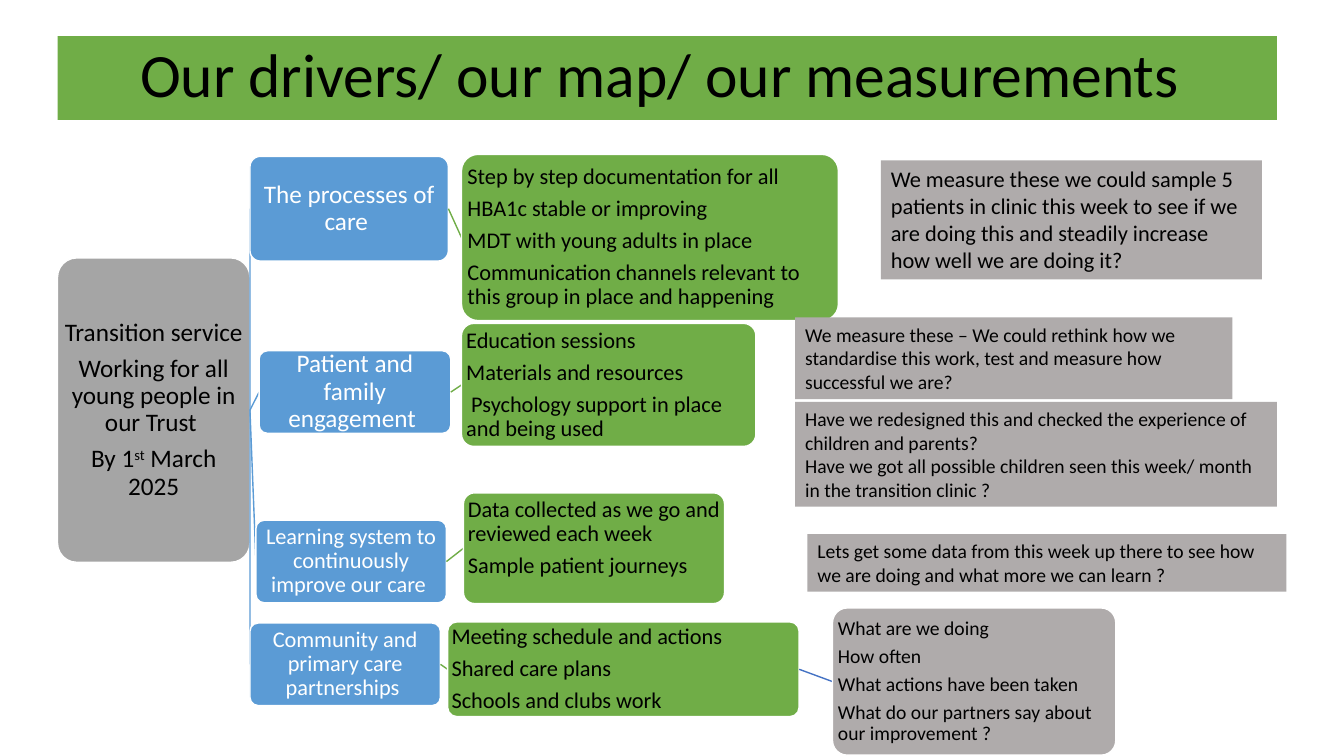
from lxml import etree
from pptx import Presentation
from pptx.dml.color import RGBColor
from pptx.enum.shapes import MSO_CONNECTOR, MSO_SHAPE
from pptx.enum.text import MSO_ANCHOR, MSO_AUTO_SIZE, PP_ALIGN
from pptx.oxml.ns import qn
from pptx.util import Cm, Pt

RECTANGLE, ROUNDED = MSO_SHAPE.RECTANGLE, MSO_SHAPE.ROUNDED_RECTANGLE
STRAIGHT = MSO_CONNECTOR.STRAIGHT
LEFT, CENTER = PP_ALIGN.LEFT, PP_ALIGN.CENTER
TOP, MIDDLE = MSO_ANCHOR.TOP, MSO_ANCHOR.MIDDLE
NO_FIT = MSO_AUTO_SIZE.NONE
LEFT_SIDE, RIGHT_SIDE = 1, 3

GREEN, BLUE, GREY, WARM_GREY = "70AD47", "5B9BD5", "A5A5A5", "AFABAB"
LINK_BLUE, BLACK, WHITE = "4472C4", "000000", "FFFFFF"


def paint(color_format, value):
    """Set a fill or font colour from a hex string."""
    color_format.rgb = RGBColor.from_string(value)


def write(frame, paragraphs, size=16, color=BLACK, align=LEFT, anchor=MIDDLE,
          spacing=0.9, after=0.35):
    """Fill a text frame; a paragraph with ^ marks has superscript between them."""
    frame.word_wrap = True
    frame.auto_size = NO_FIT
    frame.vertical_anchor = anchor
    for index, text in enumerate(paragraphs):
        paragraph = frame.add_paragraph() if index else frame.paragraphs[0]
        paragraph.alignment = align
        paragraph.line_spacing = spacing
        paragraph.space_before = Pt(0)
        paragraph.space_after = Pt(after * size)
        for part, words in enumerate(text.split("^")):
            run = paragraph.add_run()
            run.text = words
            run.font.name = "Calibri"
            run.font.size = Pt(size)
            paint(run.font.color, color)
            if part % 2:
                run._r.get_or_add_rPr().set("baseline", "30000")


class DriverMap:
    """Holds the slide and the shared look of its elements."""

    INSET = Cm(0.03)
    CORNER = 0.1
    LINE = Pt(1)

    def __init__(self, presentation):
        self.slide = presentation.slides.add_slide(presentation.slide_layouts[5])
        self.shapes = self.slide.shapes

    def title(self, text, left, top, width, height):
        heading = self.shapes.title
        heading.left, heading.top = Cm(left), Cm(top)
        heading.width, heading.height = Cm(width), Cm(height)
        heading.fill.solid()
        paint(heading.fill.fore_color, GREEN)
        write(heading.text_frame, [text], size=44, align=CENTER, after=0)

    def _shape(self, kind, place, fill):
        shape = self.shapes.add_shape(kind, *map(Cm, place))
        shape.shadow.inherit = False
        shape.fill.solid()
        paint(shape.fill.fore_color, fill)
        return shape

    def link(self, parent, color):
        """Start a line at the parent's right side."""
        start, middle = parent.left + parent.width, parent.top + parent.height // 2
        line = self.shapes.add_connector(STRAIGHT, start, middle, start, middle)
        line.begin_connect(parent, RIGHT_SIDE)
        line.line.width = self.LINE
        paint(line.line.color, color)
        etree.SubElement(line._element.spPr, qn("a:effectLst"))
        return line

    def box(self, paragraphs, place, fill, parent=None, link_color=None,
            bottom=INSET, **text_format):
        """Rounded box; its line to the parent lies behind it."""
        line = self.link(parent, link_color or fill) if parent else None
        box = self._shape(ROUNDED, place, fill)
        box.adjustments[0] = self.CORNER
        box.line.width = self.LINE
        paint(box.line.color, WHITE)
        frame = box.text_frame
        frame.margin_left = frame.margin_right = frame.margin_top = self.INSET
        frame.margin_bottom = bottom
        write(frame, paragraphs, **text_format)
        if line:
            line.end_connect(box, LEFT_SIDE)
        return box

    def measure(self, paragraphs, place, size=14):
        note = self._shape(RECTANGLE, place, WARM_GREY)
        note.line.fill.background()
        write(note.text_frame, paragraphs, size=size, anchor=TOP, spacing=1.0, after=0)


def main():
    presentation = Presentation()
    presentation.slide_width, presentation.slide_height = Cm(33.87), Cm(19.05)
    driver_map = DriverMap(presentation)

    driver_map.title("Our drivers/ our map/ our measurements ", 1.45, 0.91, 30.73, 2.11)

    # Aim
    aim = driver_map.box(
        ["Transition service ", "Working for all young people in our Trust ",
         "By 1^st^ March 2025"],
        (1.45, 6.5, 4.85, 7.67), GREY, size=18, align=CENTER)

    # Drivers: name, size, place, actions, place of actions, bottom inset
    inset = DriverMap.INSET
    drivers = [
        ("The processes of care ", 18, (6.3, 3.94, 5, 2.64),
         ["Step by step documentation for all", "HBA1c stable or improving",
          "MDT with young adults in place",
          "Communication channels relevant to this group in place and happening"],
         (11.63, 3.89, 9.5, 4.19), inset),
        ("Patient and family engagement ", 18, (6.53, 8.84, 4.83, 2.08),
         ["Education sessions", "Materials and resources",
          " Psychology support in place and being used"],
         (11.63, 8.15, 7.42, 3.1), inset),
        ("Learning system to continuously improve our care ", 16,
         (6.45, 13.11, 4.8, 2.08),
         ["Data collected as we go and reviewed each week", "Sample patient journeys"],
         (11.68, 12.42, 6.58, 2.79), Cm(0.53)),
        ("Community and primary care partnerships ", 16, (6.3, 15.7, 4.8, 2.08),
         ["Meeting schedule and actions", "Shared care plans", "Schools and clubs work"],
         (11.28, 15.67, 8.86, 2.39), inset),
    ]
    for name, size, place, actions, actions_place, bottom in drivers:
        driver = driver_map.box([name], place, BLUE, parent=aim, size=size,
                                color=WHITE, align=CENTER)
        last_actions = driver_map.box(actions, actions_place, GREEN, parent=driver,
                                      bottom=bottom)

    # Questions on the partnership actions
    driver_map.box(
        ["What are we doing", "How often", "What actions have been taken",
         "What do our partners say about our improvement ?"],
        (20.98, 15.32, 7.14, 3.71), WARM_GREY, parent=last_actions,
        link_color=LINK_BLUE, size=14)

    # Measurements
    driver_map.measure(
        ["We measure these we could sample 5 patients in clinic this week to see if we "
         "are doing this and steadily increase how well we are doing it?"],
        (22.2, 4.04, 9.6, 3), size=16)
    driver_map.measure(
        ["We measure these – We could rethink how we standardise this work, test and "
         "measure how successful we are?"],
        (20.04, 8, 11.02, 2.06))
    driver_map.measure(
        ["Have we redesigned this and checked the experience of children and parents?",
         "Have we got all possible children seen this week/ month in the transition "
         "clinic ?"],
        (20.04, 10.13, 12.14, 2.64))
    driver_map.measure(
        ["Lets get some data from this week up there to see how we are doing and what "
         "more we can learn ?"],
        (20.35, 13.46, 12.07, 1.45))

    presentation.save("out.pptx")


if __name__ == "__main__":
    main()
